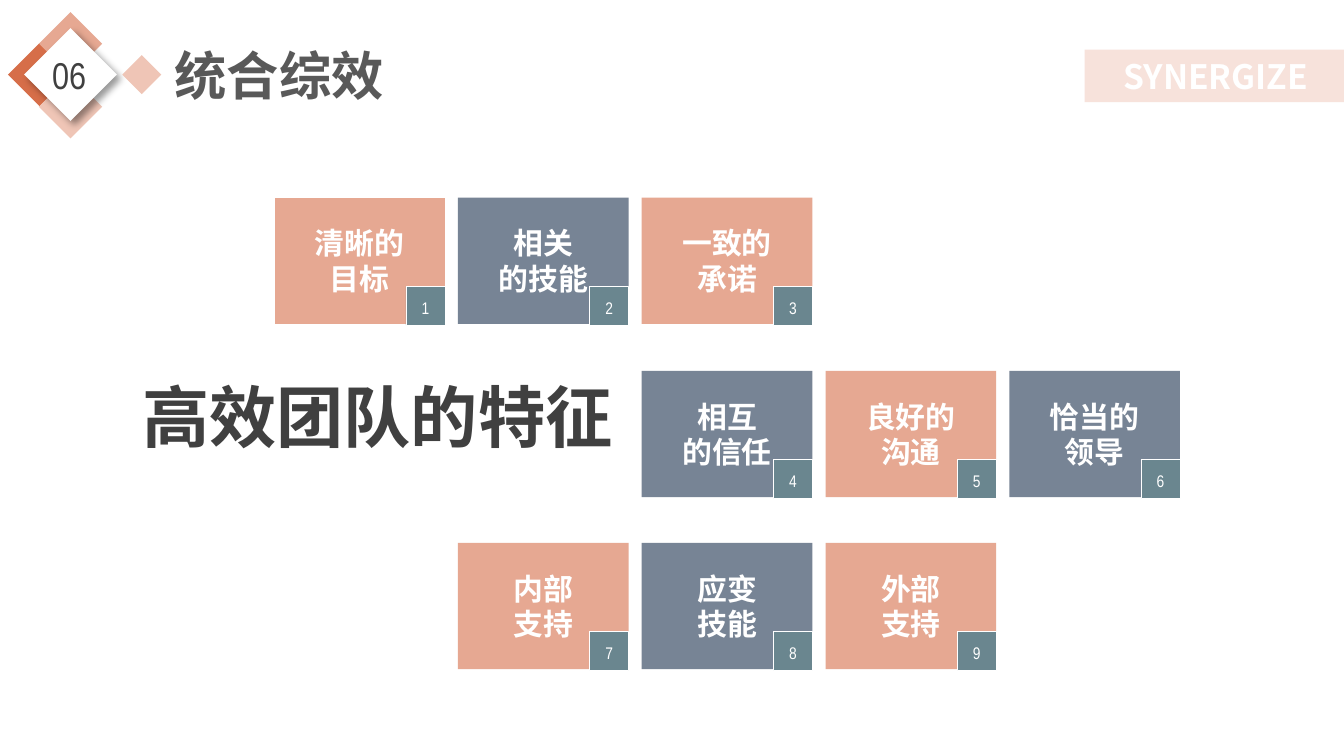
import pptx
import pptx.dml.color
import pptx.enum.shapes
import pptx.enum.text
import pptx.oxml
import pptx.oxml.ns
import pptx.util
from pptx.util import Inches

CHINESE_FONT = "Noto Sans CJK SC"
NUMBER_FONT = "Arial Narrow"
PEACH, PALE_PEACH, ORANGE = "E6A892", "EFC5B6", "D66E49"
SLATE, TEAL, WHITE, DARK = "778495", "6A868F", "FFFFFF", "404040"
SHAPES = pptx.enum.shapes.MSO_SHAPE
ALIGN = pptx.enum.text.PP_ALIGN
ANCHOR = pptx.enum.text.MSO_ANCHOR

# Tile grid of five columns: rows of (top, first column, captions)
GRID_LEFT, LAST_COLUMN_LEFT = 2.04, 7.51
COLUMN_STEP = (LAST_COLUMN_LEFT - GRID_LEFT) / 4
TILE_WIDTH, TILE_HEIGHT, BADGE_SIZE = 1.27, 0.94, 0.29
TILE_ROWS = [
    (1.47, 0, ["清晰的\n目标", "相关\n的技能", "一致的\n承诺"]),
    (2.76, 2, ["相互\n的信任", "良好的\n沟通", "恰当的\n领导"]),
    (4.04, 1, ["内部\n支持", "应变\n技能", "外部\n支持"]),
]

# Header diamonds: (left, top, size, colour)
DIAMONDS = [
    (0.06, 0.32, 0.47, ORANGE),
    (0.29, 0.09, 0.47, PEACH),
    (0.29, 0.56, 0.47, PALE_PEACH),
    (0.18, 0.21, 0.69, WHITE),
    (0.91, 0.41, 0.29, PALE_PEACH),
]


def color(value):
    return pptx.dml.color.RGBColor.from_string(value)


def write_text(shape, text, size, text_color, font=CHINESE_FONT, bold=True,
               align=ALIGN.CENTER, anchor=ANCHOR.MIDDLE, spacing=None,
               inset=(0, 0), wrap=True):
    """Fill a shape with one paragraph; a newline becomes a line break."""
    frame = shape.text_frame
    frame.auto_size = pptx.enum.text.MSO_AUTO_SIZE.NONE
    frame.word_wrap = wrap
    frame.vertical_anchor = anchor
    frame.margin_left = frame.margin_right = Inches(inset[0])
    frame.margin_top = frame.margin_bottom = Inches(inset[1])
    paragraph = frame.paragraphs[0]
    paragraph.alignment = align
    paragraph.line_spacing = spacing or pptx.util.Pt(size * 1.2)
    for index, line in enumerate(text.split("\n")):
        if index:
            paragraph.add_line_break()
        run = paragraph.add_run()
        run.text = line
        run.font.size = pptx.util.Pt(size)
        run.font.bold = bold
        run.font.name = font
        run.font.color.rgb = color(text_color)
        east_asian = pptx.oxml.parse_xml(
            f'<a:ea {pptx.oxml.ns.nsdecls("a")} typeface="{font}"/>')
        run.font._element.find(pptx.oxml.ns.qn("a:latin")).addnext(east_asian)


def add_block(slide, kind, left, top, width, height, fill, outline=None):
    shape = slide.shapes.add_shape(
        kind, Inches(left), Inches(top), Inches(width), Inches(height))
    shape.shadow.inherit = False
    shape.fill.solid()
    shape.fill.fore_color.rgb = color(fill)
    if outline:
        shape.line.color.rgb = color(outline)
        shape.line.width = pptx.util.Pt(0.25)
    else:
        shape.line.fill.background()
    return shape


def add_label(slide, left, top, width, height, text, size, **style):
    box = slide.shapes.add_textbox(
        Inches(left), Inches(top), Inches(width), Inches(height))
    write_text(box, text, size, DARK, anchor=ANCHOR.TOP,
               inset=(0.1, 0.05), **style)


def add_soft_shadow(shape):
    effects = shape._element.spPr.find(pptx.oxml.ns.qn("a:effectLst"))
    effects.append(pptx.oxml.parse_xml(
        f'<a:outerShdw {pptx.oxml.ns.nsdecls("a")} blurRad="50800" '
        'dist="38100" dir="2700000" algn="tl" rotWithShape="0">'
        '<a:srgbClr val="000000"><a:alpha val="40000"/></a:srgbClr>'
        '</a:outerShdw>'))


def add_header(slide):
    # Section number in a diamond emblem
    for left, top, size, fill in DIAMONDS:
        diamond = add_block(slide, SHAPES.DIAMOND, left, top, size, size, fill)
        if fill == WHITE:
            add_soft_shadow(diamond)
    add_label(slide, 0.22, 0.34, 0.59, 0.44, "06", 20,
              font=NUMBER_FONT, bold=False, spacing=1.0)

    # Title
    title = slide.shapes.title
    title.left, title.top = Inches(1.2), Inches(0.27)
    title.width, title.height = Inches(1.89), Inches(0.57)
    write_text(title, "统合综效", 28, "595959", align=ALIGN.LEFT,
               anchor=ANCHOR.TOP, inset=(0.1, 0.05), wrap=False)

    # English tag at the right edge
    tag = add_block(slide, SHAPES.RECTANGLE, 8.07, 0.37, 1.95, 0.39, "F7E2DB")
    write_text(tag, "SYNERGIZE", 18, WHITE)


def add_tile(slide, left, top, caption, number):
    tile = add_block(slide, SHAPES.RECTANGLE, left, top, TILE_WIDTH,
                     TILE_HEIGHT, PEACH if number % 2 else SLATE,
                     outline=WHITE if number == 1 else None)
    write_text(tile, caption, 16, WHITE)
    badge = add_block(slide, SHAPES.RECTANGLE,
                      left + TILE_WIDTH - BADGE_SIZE,
                      top + TILE_HEIGHT - BADGE_SIZE + 0.01,
                      BADGE_SIZE, BADGE_SIZE, TEAL, outline=WHITE)
    write_text(badge, str(number), 9, WHITE, font=NUMBER_FONT,
               bold=False, spacing=1.2)


def main():
    presentation = pptx.Presentation()
    presentation.slide_width = Inches(10)
    presentation.slide_height = Inches(10 * 9 / 16)
    slide = presentation.slides.add_slide(presentation.slide_layouts[5])

    add_header(slide)
    add_label(slide, 0.96, 2.74, 3.74, 0.71, "高效团队的特征", 36,
              align=ALIGN.LEFT, wrap=False)

    # Numbered tiles
    number = 0
    for top, first_column, captions in TILE_ROWS:
        for column, caption in enumerate(captions, first_column):
            number += 1
            add_tile(slide, GRID_LEFT + column * COLUMN_STEP, top,
                     caption, number)

    presentation.save("out.pptx")


if __name__ == "__main__":
    main()
